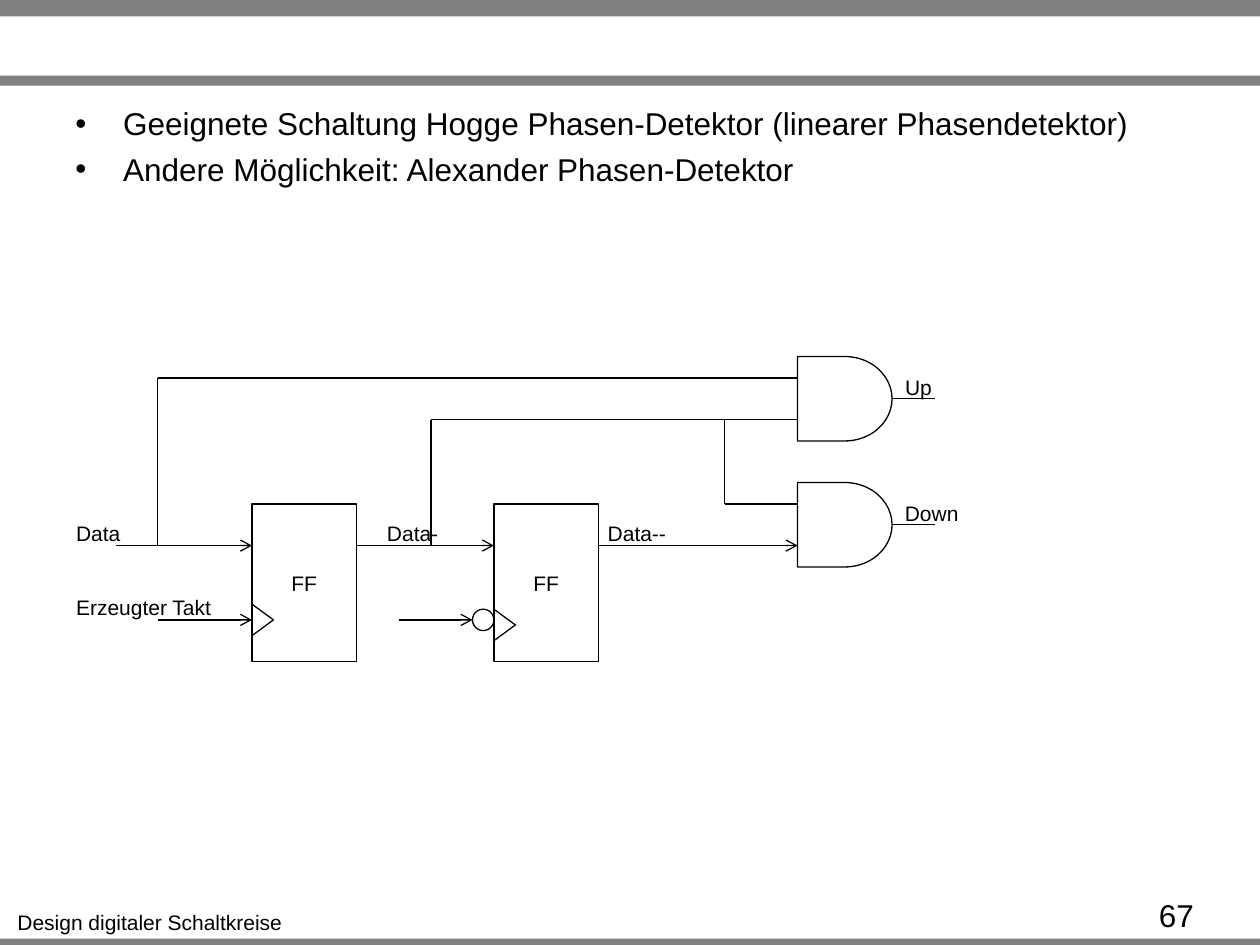
import pptx
import pptx.dml.color
import pptx.enum.shapes
import pptx.enum.text
import pptx.oxml
import pptx.oxml.ns
import pptx.util
from pptx.util import Inches

SHAPES = pptx.enum.shapes.MSO_SHAPE
ALIGN = pptx.enum.text.PP_ALIGN
ANCHOR = pptx.enum.text.MSO_ANCHOR
BLACK = "000000"
GRAY = "808080"
LINE_WIDTH = 0.75


def color(hex_string):
    return pptx.dml.color.RGBColor.from_string(hex_string)


def add_element(parent, xml):
    namespaces = pptx.oxml.ns.nsdecls("a")
    parent.append(pptx.oxml.parse_xml(xml.replace("/>", f" {namespaces}/>", 1)))


def write_text(paragraph, text, size=12, align=ALIGN.CENTER):
    paragraph.alignment = align
    run = paragraph.add_run()
    run.text = text
    run.font.name = "Arial"
    run.font.size = pptx.util.Pt(size)
    run.font.color.rgb = color(BLACK)


def add_text(slide, left, top, width, height, text, wrap=False, **text_format):
    box = slide.shapes.add_textbox(Inches(left), Inches(top), Inches(width), Inches(height))
    box.text_frame.word_wrap = wrap
    write_text(box.text_frame.paragraphs[0], text, **text_format)


def add_shape(slide, kind, left, top, width, height, fill=None, rotation=0):
    """Add a preset shape: filled without a line, or outlined without a fill."""
    shape = slide.shapes.add_shape(
        kind, Inches(left), Inches(top), Inches(width), Inches(height))
    shape.shadow.inherit = False
    shape.rotation = rotation
    if fill:
        shape.fill.solid()
        shape.fill.fore_color.rgb = color(fill)
        shape.line.fill.background()
    else:
        shape.fill.background()
        shape.line.color.rgb = color(BLACK)
        shape.line.width = pptx.util.Pt(LINE_WIDTH)
    return shape


def add_wire(slide, start, end, arrow=False):
    wire = slide.shapes.add_connector(
        pptx.enum.shapes.MSO_CONNECTOR.STRAIGHT,
        *(Inches(value) for value in (*start, *end)))
    wire.line.color.rgb = color(BLACK)
    wire.line.width = pptx.util.Pt(LINE_WIDTH)
    if arrow:
        add_element(wire.line._get_or_add_ln(), '<a:tailEnd type="arrow"/>')
    add_element(wire._element.spPr, "<a:effectLst/>")


def add_frame(slide, width):
    """Add the gray bars, the footer and the page number."""
    for top, height in ((0, 0.13), (0.6, 0.08), (7.45, 0.08)):
        add_shape(slide, SHAPES.RECTANGLE, 0, top, width, height, fill=GRAY)
    add_text(slide, 0.03, 7.17, 2.32, 0.3, "Design digitaler Schaltkreise")
    add_text(slide, 9.1, 7.06, 0.87, 0.24, "67", wrap=True, size=18, align=ALIGN.LEFT)


def add_bullets(slide, left, top, width, height, items):
    box = slide.shapes.add_textbox(Inches(left), Inches(top), Inches(width), Inches(height))
    frame = box.text_frame
    frame.word_wrap = True
    for index, item in enumerate(items):
        paragraph = frame.add_paragraph() if index else frame.paragraphs[0]
        if index:
            paragraph.space_before = pptx.util.Pt(4.4)
        properties = paragraph._p.get_or_add_pPr()
        properties.set("marL", str(Inches(0.38)))
        properties.set("indent", str(-Inches(0.38)))
        add_element(properties, '<a:buFont typeface="Arial"/>')
        add_element(properties, '<a:buChar char="•"/>')
        write_text(paragraph, item, size=18, align=ALIGN.LEFT)


def add_flip_flop(slide, left, top, clock_y):
    block = add_shape(slide, SHAPES.RECTANGLE, left, top, 0.83, 1.25)
    block.text_frame.vertical_anchor = ANCHOR.MIDDLE
    write_text(block.text_frame.paragraphs[0], "FF")
    base, depth = 0.25, 0.17
    # The triangle turns around its centre, so its box is set from that centre.
    add_shape(slide, SHAPES.ISOSCELES_TRIANGLE, left + depth / 2 - base / 2,
              clock_y - depth / 2, base, depth, rotation=90)


def add_gate(slide, left, top, label, label_width):
    width, height = 0.75, 0.67
    right, middle = left + width, top + height / 2
    add_shape(slide, SHAPES.FLOWCHART_DELAY, left, top, width, height)
    add_wire(slide, (right, middle), (right + 0.34, middle))
    add_text(slide, right, top + 0.09, label_width, 0.3, label)


def add_phase_detector(slide, left, top):
    """Add the circuit, with left and top at the corner of its bounding box."""
    first, second, gate = left + 1.5, left + 3.42, left + 5.83
    flip_flop_top = top + 1.17
    data_y, clock_y = top + 1.5, top + 2.09
    up_y, shared_y = top + 0.17, top + 0.5
    data_tap, delayed_tap, down_tap = left + 0.75, left + 2.92, left + 5.25
    bubble = 0.17

    add_flip_flop(slide, first, flip_flop_top, clock_y)
    add_flip_flop(slide, second, flip_flop_top, clock_y + 0.04)
    add_shape(slide, SHAPES.OVAL, second - bubble, clock_y - bubble / 2, bubble, bubble)
    add_gate(slide, gate, top, "Up", 0.42)
    add_gate(slide, gate, top + 1, "Down", 0.63)

    for start, end, y in (
        (left + 0.42, first, data_y),
        (first + 0.83, second, data_y),
        (second + 0.83, gate, data_y),
        (data_tap, first, clock_y),
        (left + 2.67, second - bubble, clock_y),
    ):
        add_wire(slide, (start, y), (end, y), arrow=True)

    for tap, start_y, end_y, gate_y in (
        (data_tap, data_y, up_y, up_y),
        (delayed_tap, data_y, shared_y, shared_y),
        (down_tap, shared_y, flip_flop_top, flip_flop_top),
    ):
        add_wire(slide, (tap, start_y), (tap, end_y))
        add_wire(slide, (tap, gate_y), (gate, gate_y))

    for text, offset, y, width in (
        ("Data", 0, data_y, 0.56),
        ("Data-", 2.47, data_y, 0.61),
        ("Data--", 4.22, data_y, 0.67),
        ("Erzeugter Takt", 0, clock_y, 1.28),
    ):
        add_text(slide, left + offset, y - 0.25, width, 0.3, text)


def main():
    presentation = pptx.Presentation()
    presentation.slide_width = Inches(10)
    presentation.slide_height = Inches(7.5)
    slide = presentation.slides.add_slide(presentation.slide_layouts[6])
    add_frame(slide, 10)
    add_bullets(slide, 0.5, 0.78, 9, 0.97, (
        "Geeignete Schaltung Hogge Phasen-Detektor (linearer Phasendetektor)",
        "Andere Möglichkeit: Alexander Phasen-Detektor",
    ))
    add_phase_detector(slide, 0.5, 2.83)
    presentation.save("out.pptx")


if __name__ == "__main__":
    main()
